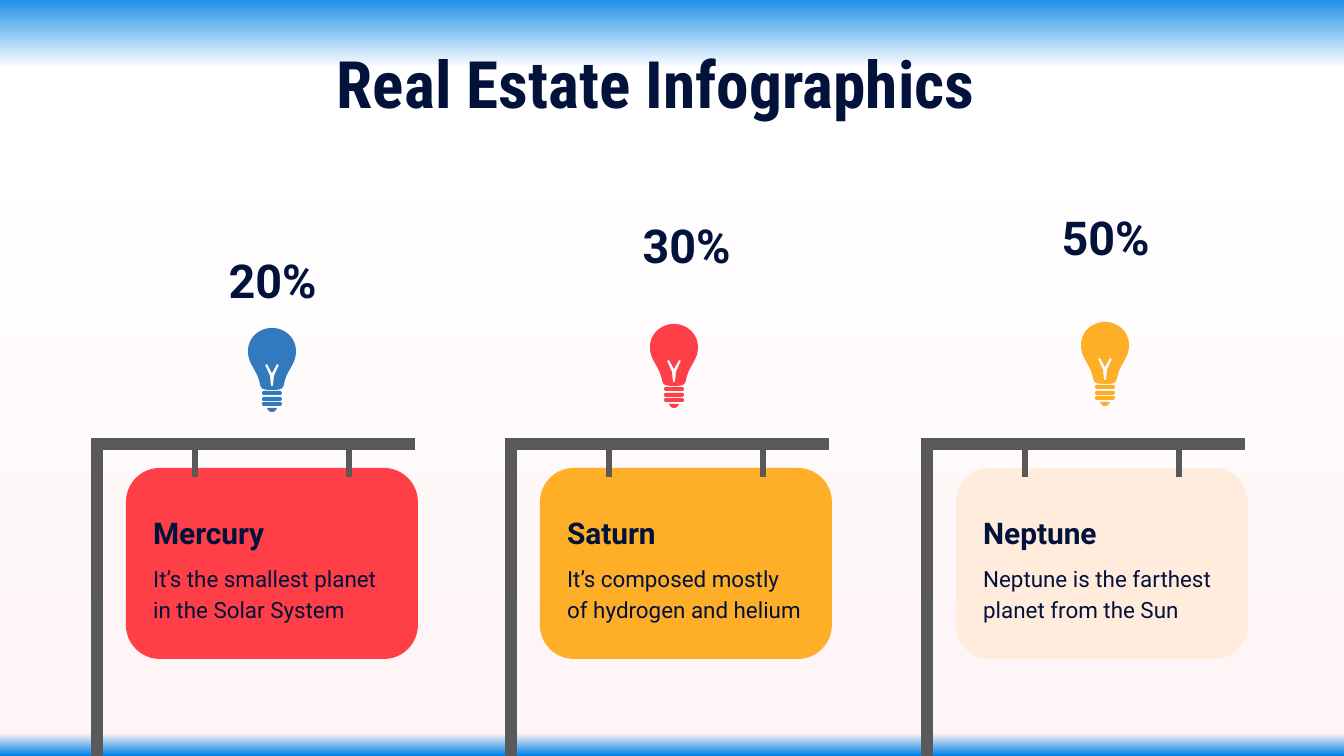
import pptx
import pptx.dml.color
import pptx.enum.dml
import pptx.enum.shapes
import pptx.enum.text
import pptx.oxml.ns
import pptx.util
from lxml import etree

PX = 914400 / 134.4
PAGE_WIDTH, PAGE_HEIGHT = 1344, 756
NAVY, GRAY = "02123B", "595959"
BACKDROP = [(0, "2291E7"), (9, "FFFFFF"), (97, "FFF5F6"), (100, "0082E5")]

TITLE = "Real Estate Infographics"
SIGNS = [
    dict(left=126, color="FF3F47", name="Mercury",
         fact="It’s the smallest planet in the Solar System",
         percent="20%", percent_at=(198, 254),
         bulb_at=(272, 328), bulb_color="317ABE"),
    dict(left=540, color="FFAE27", name="Saturn",
         fact="It’s composed mostly of hydrogen and helium",
         percent="30%", percent_at=(612, 219),
         bulb_at=(674, 324), bulb_color="FF3F47"),
    dict(left=956, color="FFECDC", name="Neptune",
         fact="Neptune is the farthest planet from the Sun",
         percent="50%", percent_at=(1031, 211),
         bulb_at=(1105, 322), bulb_color="FFAE27"),
]

# Sign frame: from x, from y, to x, to y, points; x counts from the card's left
FRAME = [
    (-29, 438, -29, PAGE_HEIGHT, 6),
    (-24, 444, 289, 444, 6),
    (69, 444, 69, 477, 3),
    (223, 444, 223, 477, 3),
]
CARD_TOP, CARD_WIDTH, CARD_HEIGHT, CARD_RADIUS = 468, 292, 191, 34

# Bulb parts count from the top of its axis; curves are the right half
GLASS_CURVES = [
    ((0, 0), (13, 0), (24, 10), (24, 23)),
    ((24, 23), (24, 37), (15, 41), (12, 56)),
    ((12, 56), (11, 61), (9, 62), (0, 62)),
]
FILAMENT = [(0, 45), (-5, 36), (-7, 37), (-2, 48), (-1, 58),
            (1, 58), (2, 48), (7, 37), (5, 36)]
TIP_CURVES = [((5, 80), (4, 83), (2, 84), (0, 84))]
THREAD_TOPS = [63, 69, 74]
THREAD_WIDTH, THREAD_HEIGHT = 20, 4


def emu(*lengths):
    return [pptx.util.Emu(round(length * PX)) for length in lengths]


def rgb(code):
    return pptx.dml.color.RGBColor.from_string(code)


def paint(shape, color):
    shape.shadow.inherit = False
    shape.fill.solid()
    shape.fill.fore_color.rgb = rgb(color)
    shape.line.fill.background()


def add_backdrop(page):
    shape = page.shapes.add_shape(pptx.enum.shapes.MSO_SHAPE.RECTANGLE,
                                  *emu(0, 0, PAGE_WIDTH, PAGE_HEIGHT))
    shape.shadow.inherit = False
    shape.line.fill.background()
    shape.fill.gradient()
    shape.fill.gradient_angle = 270
    qn = pptx.oxml.ns.qn
    stops = shape._element.spPr.find(".//" + qn("a:gsLst"))
    for stop in list(stops):
        stops.remove(stop)
    for percent, color in BACKDROP:
        stop = etree.SubElement(stops, qn("a:gs"), pos=str(percent * 1000))
        etree.SubElement(stop, qn("a:srgbClr"), val=color)


def add_text(page, text, place, align="LEFT", anchor="TOP", spacing=1.0, **font):
    box = page.shapes.add_textbox(*emu(*place))
    frame = box.text_frame
    frame.word_wrap = True
    frame.vertical_anchor = pptx.enum.text.MSO_ANCHOR[anchor]
    for side in ("left", "top", "right", "bottom"):
        setattr(frame, "margin_" + side, pptx.util.Inches(0.1))
    para = frame.paragraphs[0]
    para.alignment = pptx.enum.text.PP_ALIGN[align]
    para.line_spacing = spacing
    span = para.add_run()
    span.text = text
    span.font.color.rgb = rgb(NAVY)
    for key, value in {"name": "Roboto", **font}.items():
        setattr(span.font, key, value)


def add_rounded(shapes, place, radius, color):
    shape = shapes.add_shape(pptx.enum.shapes.MSO_SHAPE.ROUNDED_RECTANGLE, *emu(*place))
    shape.adjustments[0] = radius / min(place[2:])
    paint(shape, color)


def add_frame(page, left):
    group = page.shapes.add_group_shape()
    for x1, y1, x2, y2, width in FRAME:
        bar = group.shapes.add_connector(pptx.enum.shapes.MSO_CONNECTOR.STRAIGHT,
                                         *emu(left + x1, y1, left + x2, y2))
        bar.line.color.rgb = rgb(GRAY)
        bar.line.width = pptx.util.Pt(width)
        etree.SubElement(bar._element.spPr, pptx.oxml.ns.qn("a:effectLst"))


def mirrored(curves, steps=12):
    """Sample cubic curves and close them with their mirror image across the axis."""
    half = [curves[0][0]]
    for a, b, c, d in curves:
        for step in range(1, steps + 1):
            t = step / steps
            u = 1 - t
            half.append(tuple(u**3 * a[i] + 3 * u * u * t * b[i]
                              + 3 * u * t * t * c[i] + t**3 * d[i] for i in (0, 1)))
    return half + [(-x, y) for x, y in reversed(half)]


def add_outline(shapes, contours, origin, color):
    placed = [[emu(origin[0] + x, origin[1] + y) for x, y in contour]
              for contour in contours]
    builder = shapes.build_freeform(*placed[0][0])
    for index, contour in enumerate(placed):
        if index:
            builder.move_to(*contour[0])
        builder.add_line_segments(contour[1:], close=True)
    paint(builder.convert_to_shape(), color)


def add_bulb(page, origin, color):
    shapes = page.shapes.add_group_shape().shapes
    add_outline(shapes, [mirrored(GLASS_CURVES), FILAMENT], origin, color)
    for top in THREAD_TOPS:
        place = (origin[0] - THREAD_WIDTH / 2, origin[1] + top, THREAD_WIDTH, THREAD_HEIGHT)
        add_rounded(shapes, place, THREAD_HEIGHT / 2, color)
    add_outline(shapes, [mirrored(TIP_CURVES)], origin, color)


def main():
    deck = pptx.Presentation()
    deck.slide_width, deck.slide_height = emu(PAGE_WIDTH, PAGE_HEIGHT)
    page = deck.slides.add_slide(deck.slide_layouts[6])
    add_backdrop(page)
    point = pptx.util.Pt
    add_text(page, TITLE, (211, 47, 890, 71), "CENTER", "MIDDLE",
             name="Roboto Condensed", size=point(35), bold=True)
    for sign in SIGNS:
        left = sign["left"]
        add_rounded(page.shapes, (left, CARD_TOP, CARD_WIDTH, CARD_HEIGHT),
                    CARD_RADIUS, sign["color"])
        add_text(page, sign["name"], (left + 14, 496, 263, 70),
                 spacing=1.15, size=point(16), bold=True)
        add_text(page, sign["fact"], (left + 14, 548, 263, 83),
                 spacing=1.15, size=point(12))
        add_frame(page, left)
        add_text(page, sign["percent"], (*sign["percent_at"], 149, 52),
                 "CENTER", "MIDDLE", size=point(25), bold=True)
        add_bulb(page, sign["bulb_at"], sign["bulb_color"])
    deck.save("out.pptx")


if __name__ == "__main__":
    main()
